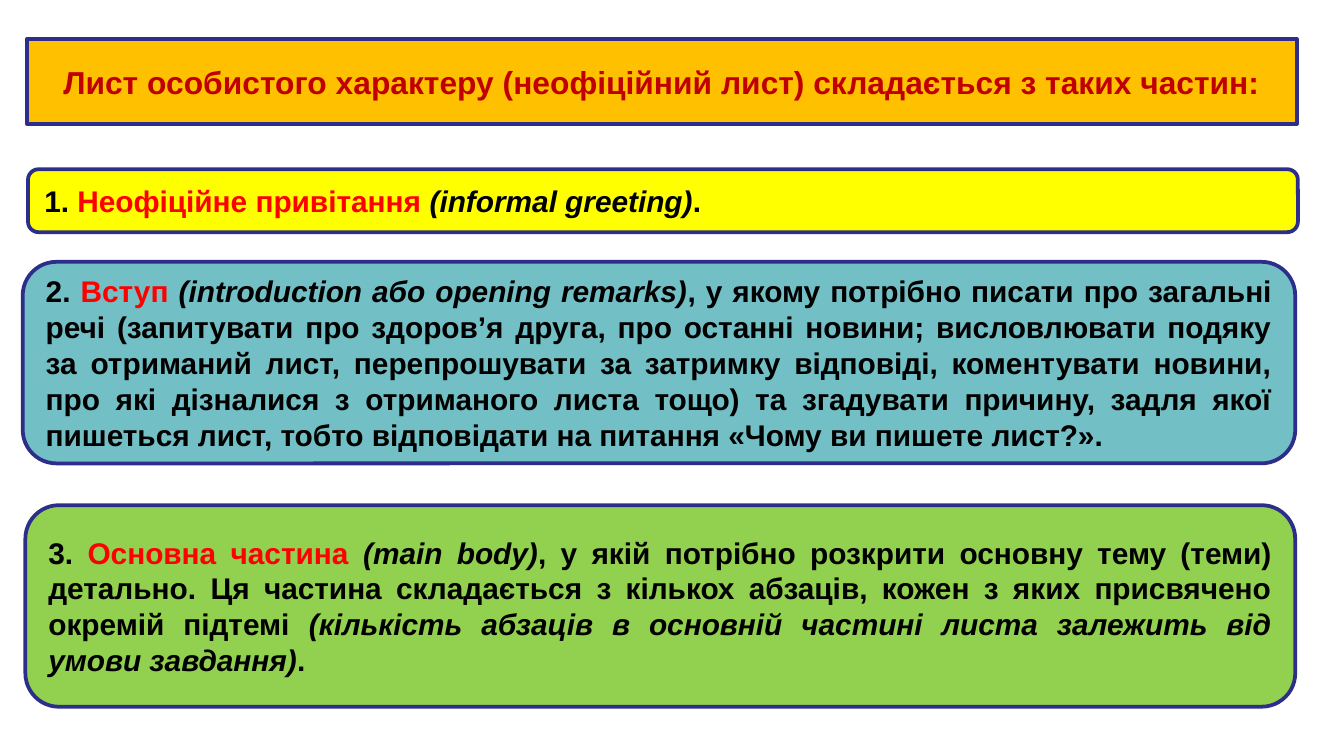
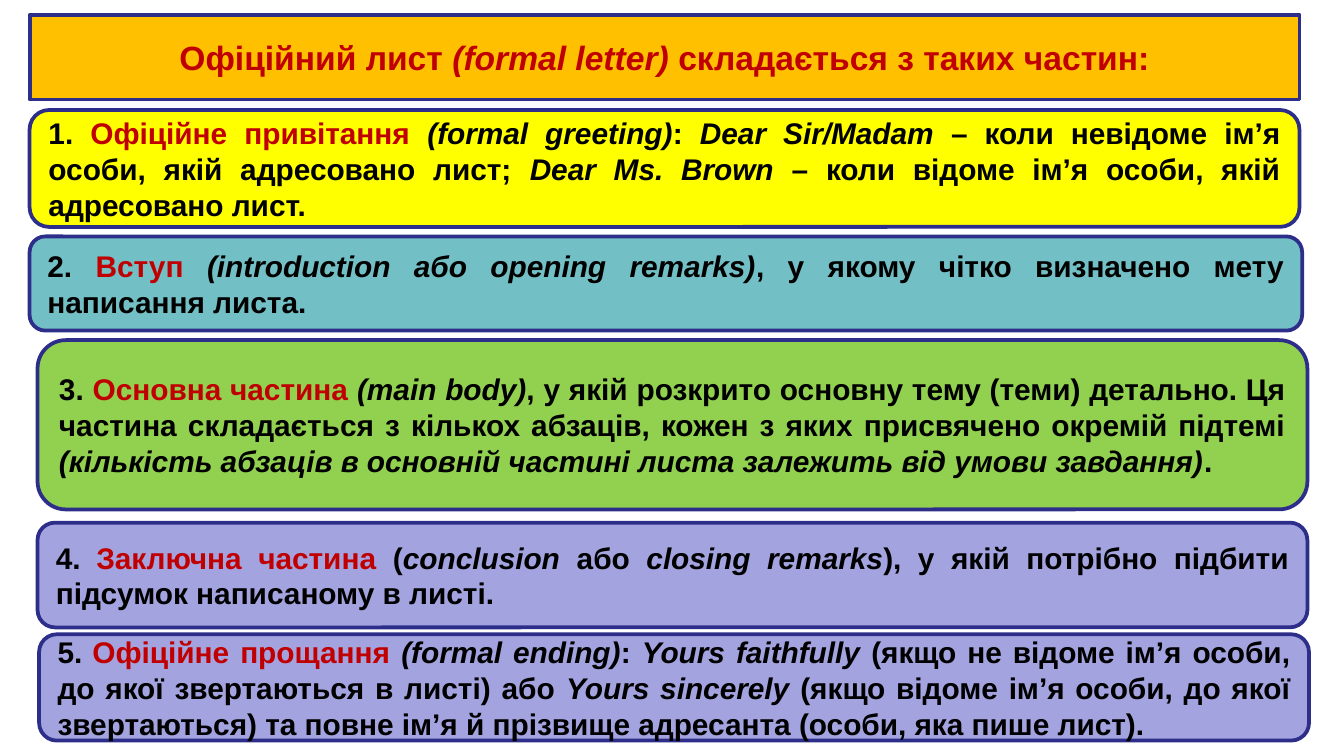
from pptx import Presentation
from pptx.dml.color import RGBColor
from pptx.enum.shapes import MSO_SHAPE
from pptx.enum.text import MSO_ANCHOR, MSO_AUTO_SIZE, PP_ALIGN
from pptx.util import Cm, Pt

ROUNDED = MSO_SHAPE.ROUNDED_RECTANGLE
MIDDLE = MSO_ANCHOR.MIDDLE
NO_AUTOFIT = MSO_AUTO_SIZE.NONE
CENTER, JUSTIFY = PP_ALIGN.CENTER, PP_ALIGN.JUSTIFY

# Shared look
FONT = "Arial"
BLACK = RGBColor(0x00, 0x00, 0x00)
WHITE = RGBColor(0xFF, 0xFF, 0xFF)
RED = RGBColor(0xFF, 0x00, 0x00)
DARK_RED = RGBColor(0xC0, 0x00, 0x00)
NAVY = RGBColor(0x2D, 0x2D, 0x8A)
ORANGE = RGBColor(0xFF, 0xC0, 0x00)
YELLOW = RGBColor(0xFF, 0xFF, 0x00)
TEAL = RGBColor(0x72, 0xBF, 0xC5)
GREEN = RGBColor(0x92, 0xD0, 0x50)
LILAC = RGBColor(0xA3, 0xA3, 0xE0)
BAND_WIDTH, TITLE_HEIGHT = 24, 1.6
BODY_SIZE, GAP_SIZE = 16, 14

# Run styles: plain text, key term, English or aside, narrow gap after a number
PLAIN, KEY, ITALIC, GAP = "plain", "key", "italic", "gap"

# Each part: box (left, top, width, height in cm), fill, runs
INFORMAL_TITLE = [("Лист особистого характеру (неофіційний лист) складається з таких частин:", PLAIN)]
INFORMAL_PARTS = [
    ((0.53, 3.2, BAND_WIDTH, 1.19), YELLOW, [
        ("1. ", PLAIN), ("Неофіційне привітання ", KEY),
        ("(informal greeting)", ITALIC), (".", PLAIN)]),
    ((0.43, 4.95, 24.05, 3.81), TEAL, [
        ("2.", PLAIN), (" Вступ ", KEY),
        ("(introduction або opening remarks)", ITALIC),
        (", у якому потрібно писати про загальні речі (запитувати про здоров’я друга, "
         "про останні новини; висловлювати подяку за отриманий лист, перепрошувати за "
         "затримку відповіді, коментувати новини, про які дізналися з отриманого листа "
         "тощо) та згадувати причину, задля якої пишеться лист, тобто відповідати на "
         "питання «Чому ви пишете лист?».", PLAIN)]),
    ((0.48, 9.55, BAND_WIDTH, 3.81), GREEN, [
        ("3. ", PLAIN), ("Основна частина ", KEY), ("(main body)", ITALIC),
        (", у якій потрібно розкрити основну тему (теми) детально. Ця частина складається "
         "з кількох абзаців, кожен з яких присвячено окремій підтемі ", PLAIN),
        ("(кількість абзаців в основній частині листа залежить від умови завдання)", ITALIC),
        (".", PLAIN)]),
]

FORMAL_TITLE = [("Офіційний лист ", PLAIN), ("(formal letter) ", ITALIC),
                ("складається з таких частин:", PLAIN)]
FORMAL_PARTS = [
    ((0.56, 2.08, BAND_WIDTH, 2.21), YELLOW, [
        ("1. ", PLAIN), ("Офіційне привітання ", KEY),
        ("(formal greeting)", ITALIC), (": ", PLAIN), ("Dear Sir/Madam ", ITALIC),
        ("– коли невідоме ім’я особи, якій адресовано лист; ", PLAIN),
        ("Dear Ms. Brown ", ITALIC),
        ("– коли відоме ім’я особи, якій адресовано лист.", PLAIN)]),
    ((0.56, 4.47, 24.05, 1.78), TEAL, [
        ("2. ", PLAIN), ("Вступ ", KEY),
        ("(introduction або opening remarks)", ITALIC),
        (", у якому чітко визначено мету написання листа.", PLAIN)]),
    ((0.71, 6.43, BAND_WIDTH, 3.2), GREEN, [
        ("3. ", PLAIN), ("Основна частина ", KEY), ("(main body)", ITALIC),
        (", у якій розкрито основну тему (теми) детально. Ця частина складається "
         "з кількох абзаців, кожен з яких присвячено окремій підтемі ", PLAIN),
        ("(кількість абзаців в основній частині листа залежить від умови завдання)", ITALIC),
        (".", PLAIN)]),
    ((0.71, 9.88, BAND_WIDTH, 1.98), LILAC, [
        ("4.", PLAIN), (" ", GAP), ("Заключна частина ", KEY), ("(", PLAIN),
        ("conclusion ", ITALIC), ("або ", PLAIN), ("closing remarks", ITALIC),
        ("), у якій потрібно підбити підсумок написаному в листі.", PLAIN)]),
    ((0.74, 11.99, BAND_WIDTH, 2.01), LILAC, [
        ("5.", PLAIN), (" ", GAP), ("Офіційне прощання ", KEY),
        ("(formal ending)", ITALIC), (": ", PLAIN), ("Yours faithfully ", ITALIC),
        ("(якщо не відоме ім’я особи, до якої звертаються в листі) або ", PLAIN),
        ("Yours sincerely ", ITALIC),
        ("(якщо відоме ім’я особи, до якої звертаються) та повне ім’я й прізвище "
         "адресанта (особи, яка пише лист).", PLAIN)]),
]


def format_band(shape, fill, runs, alignment, size, color, key_color):
    """Fill and outline a band, then write its single paragraph."""
    shape.fill.solid()
    shape.fill.fore_color.rgb = fill
    shape.line.color.rgb = NAVY
    shape.line.width = Pt(2)
    frame = shape.text_frame
    frame.word_wrap = True
    frame.auto_size = NO_AUTOFIT
    frame.vertical_anchor = MIDDLE
    paragraph = frame.paragraphs[0]
    paragraph.alignment = alignment
    for text, style in runs:
        run = paragraph.add_run()
        run.text = text
        run.font.name = FONT
        run.font.bold = True
        run.font.italic = style == ITALIC
        run.font.size = Pt(GAP_SIZE if style == GAP else size)
        run.font.color.rgb = key_color if style == KEY else color


def add_title(slide, left, top, runs, size):
    title = slide.shapes.title
    title.left, title.top = Cm(left), Cm(top)
    title.width, title.height = Cm(BAND_WIDTH), Cm(TITLE_HEIGHT)
    format_band(title, ORANGE, runs, CENTER, size, DARK_RED, DARK_RED)


def add_part(slide, box, fill, runs, key_color):
    shape = slide.shapes.add_shape(ROUNDED, *map(Cm, box))
    shape.shadow.inherit = False
    format_band(shape, fill, runs, JUSTIFY, BODY_SIZE, BLACK, key_color)


def add_letter_slide(presentation, title_at, title_runs, title_size, parts, key_color):
    slide = presentation.slides.add_slide(presentation.slide_layouts[5])
    slide.background.fill.solid()
    slide.background.fill.fore_color.rgb = WHITE
    add_title(slide, *title_at, title_runs, title_size)
    for box, fill, runs in parts:
        add_part(slide, box, fill, runs, key_color)


def main():
    presentation = Presentation()
    presentation.slide_width, presentation.slide_height = Cm(25.4), Cm(14.29)
    add_letter_slide(presentation, (0.51, 0.74), INFORMAL_TITLE, 17, INFORMAL_PARTS, RED)
    add_letter_slide(presentation, (0.56, 0.28), FORMAL_TITLE, 18, FORMAL_PARTS, DARK_RED)
    presentation.save("out.pptx")


if __name__ == "__main__":
    main()
